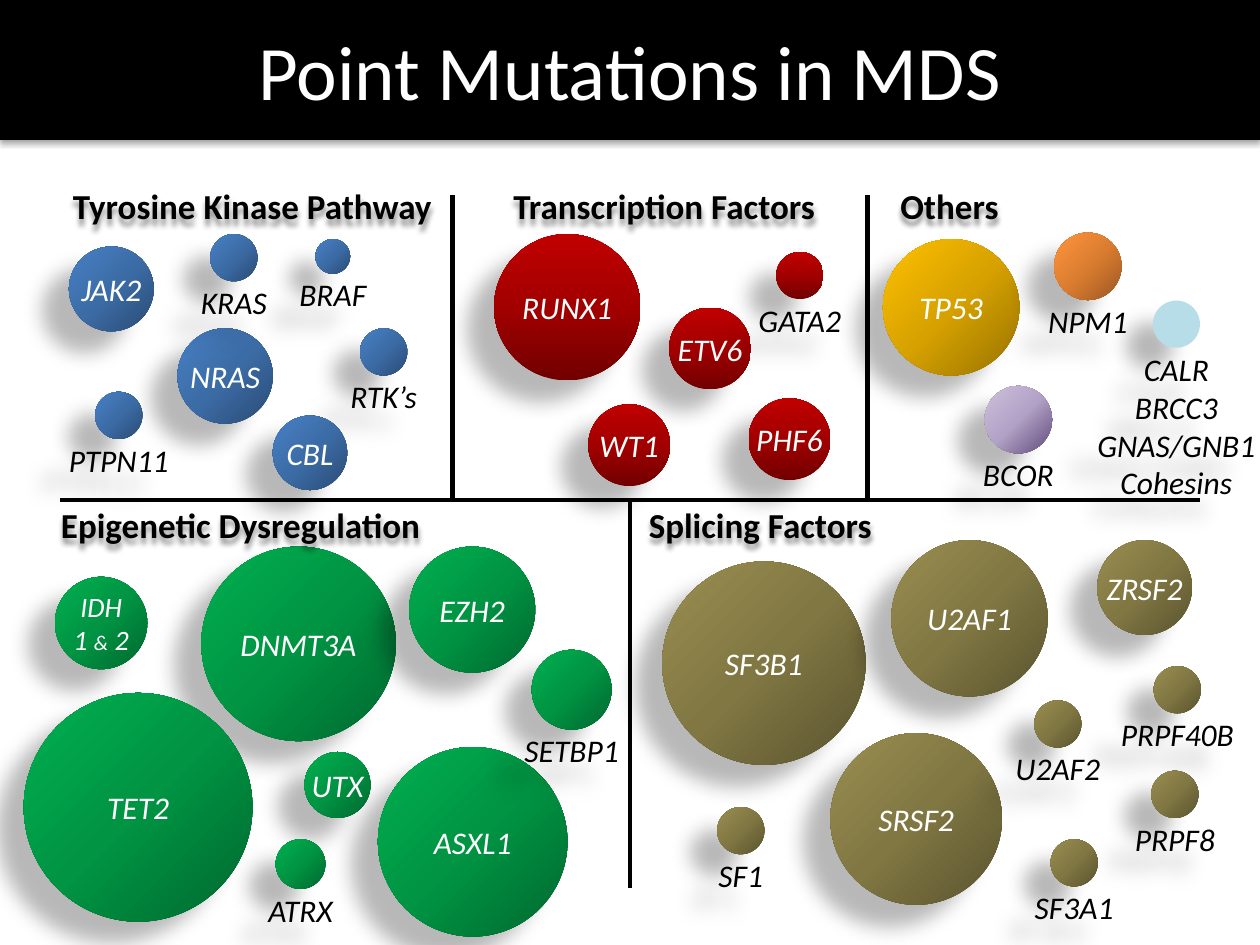
import copy
import pptx
import pptx.util
import pptx.oxml
import pptx.oxml.ns
import pptx.dml.color
import pptx.enum.shapes
import pptx.enum.text

Cm, Pt = pptx.util.Cm, pptx.util.Pt
rgb = pptx.dml.color.RGBColor.from_string
kinds = pptx.enum.shapes
words = pptx.enum.text

# Gradients run from dark to light
hues = {
    "black": "000000",
    "white": "FFFFFF",
    "red": ["720000", "A20000", "C00000"],
    "green": ["00682F", "009443", "00B050"],
    "gold": ["977200", "D7A200", "FFC000"],
    "olive": ["5A542F", "817743", "998D4F"],
    "blue": ["2A4C75", "3C6CA6", "4780C5"],
    "orange": ["9A5822", "DB7D30", "FF953E"],
    "purple": ["604A7B", "B3A2C7", "CCC1DA"],
    "pale": "B7DEE8",
}


def shade(shape, alpha, blur, dist, angle):
    """Give the shape an outer shadow; blur and dist in points."""
    shape.shadow.inherit = False
    shape._element.spPr.find(pptx.oxml.ns.qn("a:effectLst")).append(
        pptx.oxml.parse_xml(
            f'<a:outerShdw {pptx.oxml.ns.nsdecls("a")} blurRad="{Pt(blur)}" '
            f'dist="{Pt(dist)}" dir="{angle * 60000}" algn="ctr" rotWithShape="0">'
            f'<a:srgbClr val="{hues["black"]}"><a:alpha val="{alpha * 1000}"/>'
            '</a:srgbClr></a:outerShdw>'))


def write(shape, text, size, hue, bold=False, ital=False, mid=True):
    """Fill the shape with text, one paragraph a line."""
    frame = shape.text_frame
    frame.word_wrap = False
    frame.text = text
    if mid:
        frame.vertical_anchor = words.MSO_ANCHOR.MIDDLE
    for para in frame.paragraphs:
        para.alignment = words.PP_ALIGN.CENTER if mid else words.PP_ALIGN.LEFT
        for run in para.runs:
            font = run.font
            font.name, font.size = "Calibri", Pt(size)
            font.bold, font.italic = bold, ital
            font.color.rgb = rgb(hues[hue])


deck = pptx.Presentation()
deck.slide_width, deck.slide_height = Cm(25.4), Cm(19.05)
slide = deck.slides.add_slide(deck.slide_layouts[6])
shapes = slide.shapes

# Title band
band = shapes.add_shape(kinds.MSO_SHAPE.RECTANGLE, 0, 0, Cm(25.4), Cm(2.82))
band.fill.solid()
band.fill.fore_color.rgb = rgb(hues["black"])
band.line.fill.background()
shade(band, 35, 3.1, 1.8, 90)
write(band, "Point Mutations in MDS", 44, "white")
band.text_frame.paragraphs[0].space_after = Pt(6)

# Dividers between the five groups
for x1, y1, x2, y2 in [(12.7, 10.08, 12.7, 17.9), (1.2, 10.08, 24.2, 10.08),
                       (9.12, 3.94, 9.12, 10.08), (17.48, 3.94, 17.48, 10.08)]:
    line = shapes.add_connector(kinds.MSO_CONNECTOR.STRAIGHT,
                                Cm(x1), Cm(y1), Cm(x2), Cm(y2))
    line.line.color.rgb = rgb(hues["black"])
    line.line.width = Pt(2.75)
    line._element.spPr.append(pptx.oxml.parse_xml(
        f'<a:effectLst {pptx.oxml.ns.nsdecls("a")}/>'))

# Genes: name, left, top, width, and whether the name stands below
genes = {
    "red": [
        ("RUNX1", 9.96, 4.72, 2.95, False), ("ETV6", 13.49, 6.2, 1.65, False),
        ("WT1", 11.86, 8.15, 1.65, False), ("PHF6", 15.09, 8.03, 1.65, False),
        ("GATA2", 15.65, 5.08, 0.95, True)],
    "blue": [
        ("JAK2", 1.39, 4.97, 1.71, False), ("NRAS", 3.58, 6.62, 1.92, False),
        ("BRAF", 6.36, 4.82, 0.7, True), ("KRAS", 4.24, 4.72, 0.95, True),
        ("RTK’s", 7.26, 6.62, 0.95, True), ("PTPN11", 1.92, 7.9, 0.95, True),
        ("CBL", 5.5, 8.38, 1.5, False)],
    "gold": [("TP53", 17.8, 4.82, 2.75, False)],
    "pale": [("CALR\nBRCC3\nGNAS/GNB1\nCohesins", 23.24, 6.06, 0.95, True)],
    "orange": [("NPM1", 21.25, 4.69, 1.36, True)],
    "purple": [("BCOR", 19.85, 7.78, 1.36, True)],
    "green": [
        ("DNMT3A", 4.06, 11.02, 3.92, False), ("EZH2", 8.25, 11.02, 2.54, False),
        ("ASXL1", 7.62, 15.06, 3.82, False), ("IDH\n1 & 2", 1.11, 11.63, 1.86, False),
        ("UTX", 6.14, 15.16, 1.33, False), ("ATRX", 5.56, 16.92, 1, True),
        ("SETBP1", 10.72, 13.1, 1.61, True), ("TET2", 0.48, 13.97, 4.61, False)],
    "olive": [
        ("SF3B1", 13.35, 11.32, 4.1, False), ("SRSF2", 16.74, 14.78, 3.46, False),
        ("U2AF1", 17.97, 10.89, 3.15, False), ("ZRSF2", 22.12, 10.89, 1.91, False),
        ("SF1", 14.46, 16.27, 0.95, True), ("SF3A1", 21.18, 16.92, 0.95, True),
        ("PRPF40B", 23.26, 13.43, 0.95, True), ("U2AF2", 20.85, 14.12, 0.95, True),
        ("PRPF8", 23.21, 15.54, 0.95, True)],
}
wide, high = 3.2, 0.77
for hue, group in genes.items():
    for name, left, top, size, below in group:
        ball = shapes.add_shape(kinds.MSO_SHAPE.OVAL,
                                Cm(left), Cm(top), Cm(size), Cm(size))
        if hue == "pale":
            ball.fill.solid()
            ball.fill.fore_color.rgb = rgb(hues[hue])
        else:
            ball.fill.gradient()
            ball.fill.gradient_angle = 90 if hue == "red" else 135
            stops = next(ball._element.spPr.iter(pptx.oxml.ns.qn("a:gsLst")))
            stops.append(copy.deepcopy(stops[0]))
            for i, stop in enumerate(ball.fill.gradient_stops):
                stop.position = i / 2
                stop.color.rgb = rgb(hues[hue][i])
        ball.line.fill.background()
        shade(ball, 28, 11.8, 19.7, 141)
        if below:
            tag = shapes.add_textbox(Cm(left + (size - wide) / 2), Cm(top + size + 0.03),
                                     Cm(wide), Cm(high * len(name.split("\n"))))
            frame = tag.text_frame
            frame.margin_left = frame.margin_right = 0
            frame.margin_top = frame.margin_bottom = 0
            write(tag, name, 18, "black", ital=True)
            shade(tag, 28, 11.8, 19.7, 141)
        else:
            write(ball, name, 16 if "IDH" in name else 18, "white", ital=True)
        if "&" in name:
            # The ampersand is smaller than the digits around it
            para = ball.text_frame.paragraphs[1]
            para.text = "1 "
            para.add_run().text = "&"
            para.add_run().text = " 2"
            for run, pts in zip(para.runs, (16, 12, 16)):
                run.font.name, run.font.size = "Calibri", Pt(pts)
                run.font.italic = True
                run.font.color.rgb = rgb(hues["white"])

# Group headings
for text, left, top, width in [
        ("Tyrosine Kinase Pathway", 1.22, 3.6, 7.8),
        ("Transcription Factors", 10.1, 3.6, 6.65),
        ("Others", 17.9, 3.6, 2.5),
        ("Epigenetic Dysregulation", 0.98, 10.02, 7.82),
        ("Splicing Factors", 12.83, 10.02, 5.05)]:
    head = shapes.add_textbox(Cm(left), Cm(top), Cm(width), Cm(1.11))
    write(head, text, 20, "black", bold=True, mid=False)
    shade(head, 43, 3, 3, 90)

deck.save("out.pptx")
